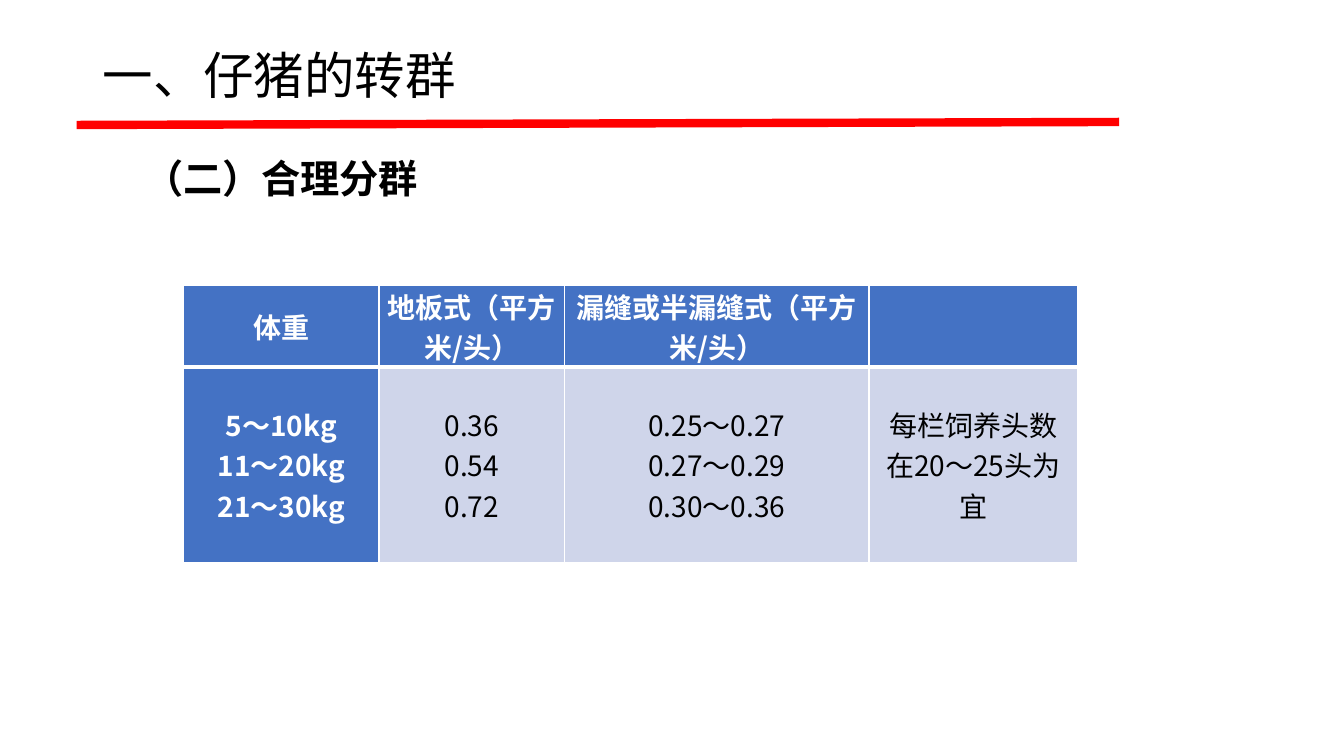
"""Build the slide on grouping piglets, with its table of floor space per head."""
from dataclasses import dataclass

from lxml import etree
from pptx import Presentation
from pptx.dml.color import RGBColor
from pptx.enum import shapes, text
from pptx.oxml import ns
from pptx.util import Inches, Pt


@dataclass(frozen=True)
class Theme:
    black: str = "000000"
    white: str = "FFFFFF"
    red: str = "FF0000"
    blue: str = "4472C4"
    pale: str = "CFD5EA"
    cjk: str = "Noto Sans CJK SC"
    latin: str = "Arial"
    title: int = 36
    heading: int = 28
    cell: int = 20


theme = Theme()


def style(para, face, size, color, bold=False):
    """Format every run of a paragraph, East Asian letters included."""
    for span in para.runs:
        span.font.name = face
        span.font.size = Pt(size)
        span.font.bold = bold
        span.font.color.rgb = RGBColor.from_string(color)
        east = etree.SubElement(span.font._element, ns.qn("a:ea"))
        east.set("typeface", theme.cjk)


def add_border(cell, side, position, points):
    """Draw one white edge of a table cell."""
    edge = etree.Element(ns.qn(f"a:ln{side}"), w=str(Pt(points)))
    fill = etree.SubElement(edge, ns.qn("a:solidFill"))
    etree.SubElement(fill, ns.qn("a:srgbClr"), val=theme.white)
    cell._tc.get_or_add_tcPr().insert(position, edge)


deck = Presentation()
deck.slide_width, deck.slide_height = Inches(13.33), Inches(7.5)
page = deck.slides.add_slide(deck.slide_layouts[6])

rule = page.shapes.add_connector(
    shapes.MSO_CONNECTOR.STRAIGHT, Inches(0.76), Inches(1.24), Inches(11.1), Inches(1.21)
)
rule.line.color.rgb = RGBColor.from_string(theme.red)
rule.line.width = Pt(6)
etree.SubElement(rule._element.spPr, ns.qn("a:effectLst"))

headings = [
    ("一、仔猪的转群", (0.92, 0.08, 11.18, 1.39), text.MSO_ANCHOR.MIDDLE,
     text.PP_ALIGN.LEFT, 0, theme.cjk, theme.title, False),
    ("（二）合理分群", (1.08, 1.53, 11.18, 4.76), text.MSO_ANCHOR.TOP,
     text.PP_ALIGN.JUSTIFY, 0.25, theme.latin, theme.heading, True),
]
for words, place, anchor, align, indent, face, size, bold in headings:
    box = page.shapes.add_textbox(*map(Inches, place))
    frame = box.text_frame
    frame.word_wrap = True
    frame.vertical_anchor = anchor
    frame.text = words
    para = frame.paragraphs[0]
    para.alignment = align
    para.line_spacing = 0.9
    para._p.get_or_add_pPr().set("marL", str(Inches(indent)))
    style(para, face, size, theme.black, bold)

rows = [
    ["体重", "地板式（平方米/头）", "漏缝或半漏缝式（平方米/头）", ""],
    ["5～10kg\n11～20kg\n21～30kg", "0.36\n0.54\n0.72",
     "0.25～0.27\n0.27～0.29\n0.30～0.36", "每栏饲养头数在20～25头为宜"],
]
widths = [1.94, 1.84, 3.02, 2.07]
heights = [0.81, 1.94]
table = page.shapes.add_table(
    len(rows), len(widths), Inches(1.82), Inches(2.83), Inches(sum(widths)), Inches(sum(heights))
).table
for column, width in zip(table.columns, widths):
    column.width = Inches(width)
for row, height in zip(table.rows, heights):
    row.height = Inches(height)

for r, row in enumerate(rows):
    for c, words in enumerate(row):
        cell = table.cell(r, c)
        strong = r == 0 or c == 0
        cell.text_frame.text = words
        cell.vertical_anchor = text.MSO_ANCHOR.MIDDLE
        cell.margin_left = cell.margin_right = Inches(0.07)
        cell.margin_top = cell.margin_bottom = 0
        cell.fill.solid()
        cell.fill.fore_color.rgb = RGBColor.from_string(theme.blue if strong else theme.pale)
        for para in cell.text_frame.paragraphs:
            para.alignment = text.PP_ALIGN.CENTER
            style(para, theme.cjk, theme.cell, theme.white if strong else theme.black, strong)
        for position, side in enumerate("LRTB"):
            below_header = (r, side) in [(0, "B"), (1, "T")]
            add_border(cell, side, position, 3 if below_header else 1)

deck.save("out.pptx")
